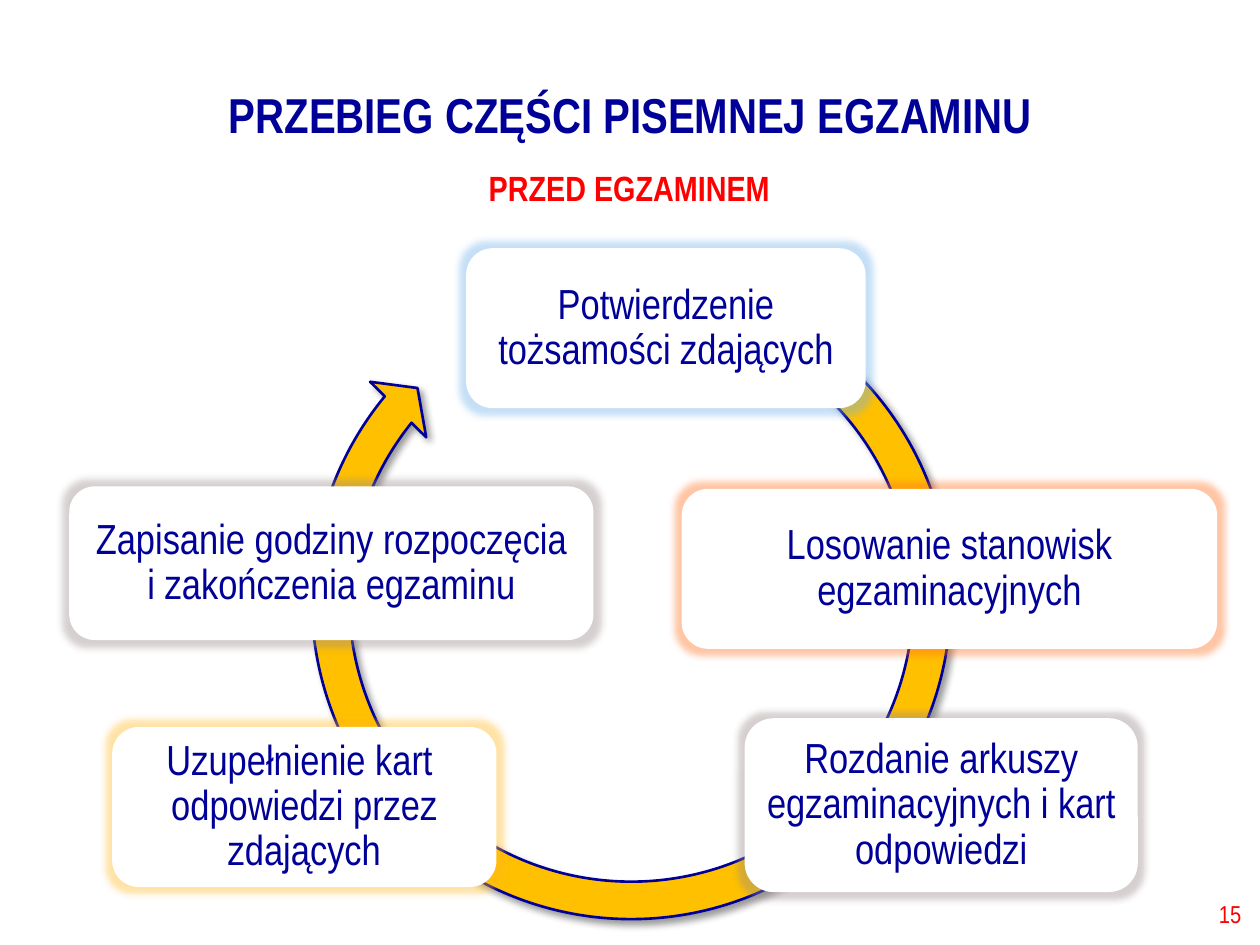
import dataclasses

import pptx
import pptx.dml.color
import pptx.enum.shapes
import pptx.enum.text
import pptx.oxml
import pptx.oxml.ns
import pptx.util
from pptx.util import Inches


@dataclasses.dataclass(frozen=True)
class Theme:
    font: str = "Arial Narrow"
    navy: str = "000099"
    red: str = "FF0000"
    gold: str = "FFC000"
    white: str = "FFFFFF"
    black: str = "000000"
    blue_glow: str = "70B0EA"
    orange_glow: str = "FF7020"
    grey_glow: str = "988888"
    yellow_glow: str = "FFB820"
    title_size: int = 28
    step_size: int = 24
    subtitle_size: int = 20
    number_size: int = 14


THEME = Theme()
ALIGN = pptx.enum.text.PP_ALIGN
SHAPES = pptx.enum.shapes.MSO_SHAPE

STEPS = [
    ("Potwierdzenie tożsamości zdających", (3.7, 1.97, 3.17, 1.27), THEME.blue_glow),
    ("Losowanie stanowisk egzaminacyjnych", (5.41, 3.88, 4.25, 1.27), THEME.orange_glow),
    ("Rozdanie arkuszy egzaminacyjnych i kart odpowiedzi", (5.91, 5.7, 3.12, 1.38), THEME.grey_glow),
    ("Uzupełnienie kart  odpowiedzi przez zdających", (0.89, 5.77, 3.05, 1.27), THEME.yellow_glow),
    ("Zapisanie godziny rozpoczęcia\ni zakończenia egzaminu", (0.55, 3.86, 4.16, 1.22), THEME.grey_glow),
]


def rgb(color):
    return pptx.dml.color.RGBColor.from_string(color)


def place(box):
    return [Inches(length) for length in box]


def write_text(shape, text, size, color, bold=False, align=ALIGN.CENTER, spacing=0.9):
    frame = shape.text_frame
    frame.word_wrap = True
    frame.vertical_anchor = pptx.enum.text.MSO_ANCHOR.MIDDLE
    paragraph = frame.paragraphs[0]
    paragraph.alignment = align
    paragraph.line_spacing = spacing
    for index, line in enumerate(text.split("\n")):
        if index:
            paragraph.add_line_break()
        run = paragraph.add_run()
        run.text = line
        run.font.name = THEME.font
        run.font.size = pptx.util.Pt(size)
        run.font.bold = bold
        run.font.color.rgb = rgb(color)


def add_label(slide, box, text, size, color, **style):
    write_text(slide.shapes.add_textbox(*place(box)), text, size, color, **style)


def add_effect(shape, tag, color, alpha, **attributes):
    shape.shadow.inherit = False
    effects = shape._element.spPr.find(pptx.oxml.ns.qn("a:effectLst"))
    settings = " ".join(f'{name}="{value}"' for name, value in attributes.items())
    effects.append(pptx.oxml.parse_xml(
        f'<a:{tag} {pptx.oxml.ns.nsdecls("a")} {settings}>'
        f'<a:srgbClr val="{color}"><a:alpha val="{alpha * 1000}"/></a:srgbClr></a:{tag}>'
    ))


def add_cycle_arrow(slide):
    arrow = slide.shapes.add_shape(SHAPES.CIRCULAR_ARROW, *place((2.31, 2.06, 5.4, 5.4)))
    for index, value in enumerate((0.055, 3.307, 131.528, 177.78, 0.058)):
        arrow.adjustments[index] = value
    arrow.fill.solid()
    arrow.fill.fore_color.rgb = rgb(THEME.gold)
    arrow.line.color.rgb = rgb(THEME.navy)
    arrow.line.width = pptx.util.Pt(1.5)
    add_effect(arrow, "outerShdw", THEME.black, 40, blurRad=pptx.util.Pt(4),
               dist=pptx.util.Pt(3), dir=45 * 60000)


def add_step(slide, text, box, glow):
    step = slide.shapes.add_shape(SHAPES.ROUNDED_RECTANGLE, *place(box))
    step.fill.solid()
    step.fill.fore_color.rgb = rgb(THEME.white)
    step.line.fill.background()
    add_effect(step, "glow", glow, 40, rad=pptx.util.Pt(8))
    write_text(step, text, THEME.step_size, THEME.navy)
    frame = step.text_frame
    frame.margin_left = frame.margin_right = Inches(0.1)
    frame.margin_top = frame.margin_bottom = Inches(0.1)


def main():
    presentation = pptx.Presentation()
    presentation.slide_width = Inches(10)
    presentation.slide_height = Inches(7.5)
    slide = presentation.slides.add_slide(presentation.slide_layouts[6])

    add_label(slide, (7.7, 7.05, 2.25, 0.4), "15", THEME.number_size, THEME.red,
              align=ALIGN.RIGHT, spacing=1.0)
    add_label(slide, (0.69, 0.63, 8.62, 0.6), "PRZEBIEG CZĘŚCI PISEMNEJ EGZAMINU",
              THEME.title_size, THEME.navy, bold=True)
    add_cycle_arrow(slide)
    for text, box, glow in STEPS:
        add_step(slide, text, box, glow)
    add_label(slide, (2.38, 1.21, 5.23, 0.6), "PRZED EGZAMINEM",
              THEME.subtitle_size, THEME.red, bold=True)

    presentation.save("out.pptx")


if __name__ == "__main__":
    main()
